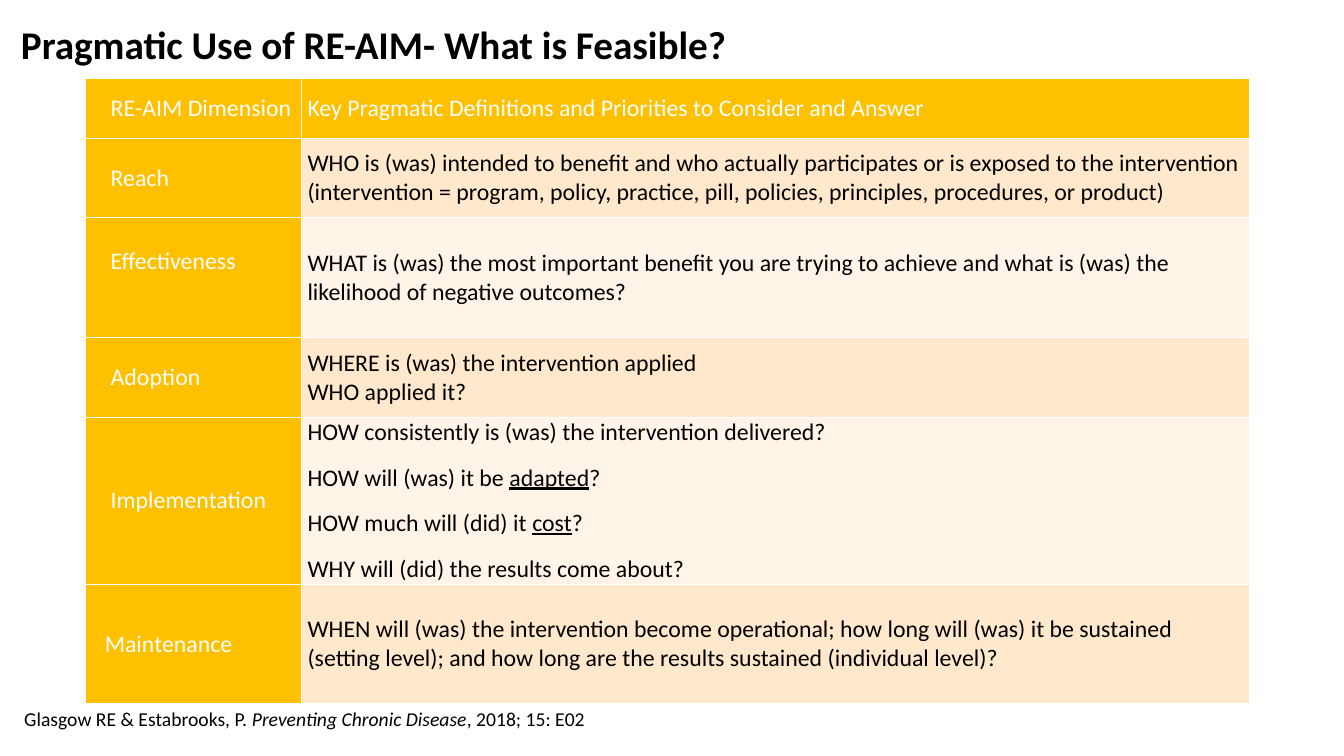
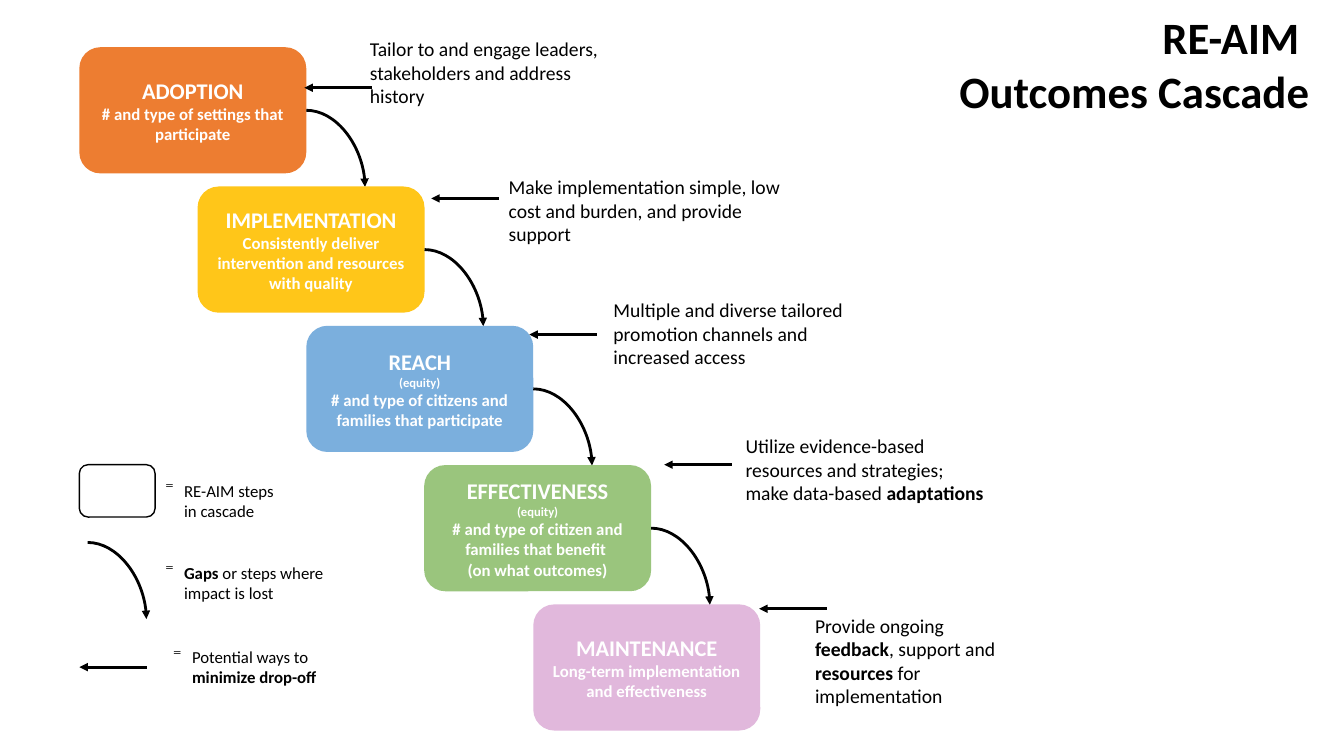
"""Build two slides on RE-AIM: a table of pragmatic questions and an outcomes cascade."""
from dataclasses import dataclass

from lxml.etree import SubElement
from pptx import Presentation
from pptx.dml.color import RGBColor
from pptx.enum.shapes import MSO_CONNECTOR, MSO_SHAPE
from pptx.enum.text import MSO_ANCHOR, PP_ALIGN
from pptx.oxml.ns import qn
from pptx.util import Cm, Pt


@dataclass(frozen=True)
class Theme:
    font: str = "Calibri"
    black: str = "000000"
    white: str = "FFFFFF"
    gold: str = "FFC000"
    bands: tuple = ("FFE8CC", "FFF4E7")
    title: int = 28
    big_title: int = 32
    table: int = 17
    step: int = 16
    body: int = 14
    small: int = 12
    tiny: int = 9


THEME = Theme()

TABLE_TITLE = "Pragmatic Use of RE-AIM- What is Feasible?"
CITATION = "Glasgow RE & Estabrooks, P. *Preventing Chronic Disease*, 2018; 15: E02"
TABLE_LEFT, TABLE_TOP = 2.16, 1.98
COLUMN_WIDTHS = (5.44, 23.88)
TABLE_ROWS = [
    (1.5, "RE-AIM Dimension", ["Key Pragmatic Definitions and Priorities to Consider and Answer"]),
    (2.01, "Reach", [
        "WHO is (was) intended to benefit and who actually participates or is exposed to the "
        "intervention (intervention = program, policy, practice, pill, policies, principles, "
        "procedures, or product)"]),
    (3.02, "Effectiveness", [
        "WHAT is (was) the most important benefit you are trying to achieve and what is (was) "
        "the likelihood of negative outcomes?"]),
    (2.01, "Adoption", ["WHERE is (was) the intervention applied", "WHO applied it?"]),
    (4.01, "Implementation", [
        "HOW consistently is (was) the intervention delivered?",
        "HOW will (was) it be *adapted*?",
        "HOW much will (did) it *cost*?",
        "WHY will (did) the results come about?"]),
    (3.02, "Maintenance", [
        "WHEN will (was) the intervention become operational; how long will (was) it be "
        "sustained (setting level); and how long are the results sustained (individual level)?"]),
]

CASCADE_TITLE = ["RE-AIM ", "Outcomes Cascade"]
STEP_TOP, STEP_PITCH = 1.19, 3.51
STEP_WIDTH, STEP_HEIGHT = 5.72, 3.18
GAP_WIDTH, GAP_HEIGHT = 1.48, 1.93
ARROW_LENGTH = 1.7
STEPS = [
    (2, "ED7D31", 100, ["ADOPTION", "# and type of settings that participate"]),
    (4.98, "FFC000", 90, ["IMPLEMENTATION",
                          "Consistently deliver intervention and resources with quality"]),
    (7.72, "5B9BD5", 80, ["REACH", "(equity)",
                          "# and type of citizens and families that participate"]),
    (10.69, "70AD47", 70, ["EFFECTIVENESS", "(equity)",
                           "# and type of citizen and families that benefit ",
                           "(on what outcomes)"]),
    (13.44, "CD89C5", 60, ["MAINTENANCE", "Long-term implementation and effectiveness"]),
]
REMEDIES = [
    ((7.67, 2.21), (9.07, 0.81, 6.35, 2.06),
     "Tailor to and engage leaders, stakeholders and address history"),
    ((10.87, 5), (12.57, 4.29, 7.42, 2.06),
     "Make implementation simple, low cost and burden, and provide support"),
    ((13.34, 8.43), (15.21, 7.39, 6.99, 2.06),
     "Multiple and diverse tailored promotion channels and increased access"),
    ((16.74, 11.71), (18.54, 10.82, 6.65, 2.06),
     "Utilize evidence-based resources and strategies; make data-based *adaptations*"),
    ((19.13, 15.34), (20.29, 15.34, 5.08, 2.64),
     "Provide ongoing *feedback*, support and *resources* for implementation"),
]
LEGEND_BOX = (2, 11.71, 1.91, 1.32)
LEGEND_GAP = (2.21, 13.67)
LEGEND_ARROW = (2, 16.81)
LEGEND = [
    ((3.91, 11.99, 3.48, 1.27), "RE-AIM steps in cascade"),
    ((3.91, 14.05, 4.6, 1.27), "*Gaps* or steps where impact is lost"),
    ((4.11, 16.18, 4.14, 1.27), "Potential ways to *minimize drop-off*"),
]


def lengths(values):
    return [Cm(value) for value in values]


def write(text_frame, lines, size, colour=THEME.black, bold=False, emphasis="bold",
          align=PP_ALIGN.LEFT, sizes=None):
    """Write one paragraph per line; text between asterisks gets the emphasis."""
    text_frame.word_wrap = True
    for index, line in enumerate(lines):
        paragraph = text_frame.add_paragraph() if index else text_frame.paragraphs[0]
        paragraph.alignment = align
        for position, part in enumerate(line.split("*")):
            if not part:
                continue
            run = paragraph.add_run()
            run.text = part
            run.font.name = THEME.font
            run.font.size = Pt(sizes[index] if sizes else size)
            run.font.color.rgb = RGBColor.from_string(colour)
            run.font.bold = bold
            if position % 2:
                setattr(run.font, emphasis, True)


def add_text(slide, box, lines, size, **style):
    shape = slide.shapes.add_textbox(*lengths(box))
    write(shape.text_frame, lines, size, **style)
    return shape


def add_rounded_box(slide, box, colour, opacity=100):
    shape = slide.shapes.add_shape(MSO_SHAPE.ROUNDED_RECTANGLE, *lengths(box))
    shape.shadow.inherit = False
    shape.fill.solid()
    shape.fill.fore_color.rgb = RGBColor.from_string(colour)
    shape.line.fill.background()
    if opacity < 100:
        colour_element = shape.element.spPr.find(qn("a:solidFill"))[0]
        SubElement(colour_element, qn("a:alpha"), val=str(opacity * 1000))
    return shape


def add_arrow(slide, start, end, kind=MSO_CONNECTOR.STRAIGHT):
    connector = slide.shapes.add_connector(kind, *lengths(start + end))
    connector.line.color.rgb = RGBColor.from_string(THEME.black)
    connector.line.width = Pt(2)
    properties = connector.element.spPr
    SubElement(properties.find(qn("a:ln")), qn("a:tailEnd"), type="triangle")
    SubElement(properties, qn("a:effectLst"))
    return connector


def add_gap(slide, left, top):
    connector = add_arrow(slide, (left, top), (left + GAP_WIDTH, top + GAP_HEIGHT),
                          MSO_CONNECTOR.CURVE)
    connector.element.spPr.find(qn("a:prstGeom")).set("prst", "curvedConnector2")


def add_remedy_arrow(slide, tip):
    add_arrow(slide, (tip[0] + ARROW_LENGTH, tip[1]), tip)


def style_cell(cell, colour):
    cell.margin_left = cell.margin_right = Cm(0.15)
    cell.margin_top = cell.margin_bottom = 0
    cell.vertical_anchor = MSO_ANCHOR.MIDDLE
    properties = cell._tc.get_or_add_tcPr()
    for side in ("lnL", "lnR", "lnT", "lnB"):
        border = SubElement(properties, qn(f"a:{side}"), w=str(Pt(1)))
        SubElement(SubElement(border, qn("a:solidFill")), qn("a:srgbClr"), val=THEME.white)
    cell.fill.solid()
    cell.fill.fore_color.rgb = RGBColor.from_string(colour)


def add_dimension_table(slide):
    heights = [row[0] for row in TABLE_ROWS]
    box = (TABLE_LEFT, TABLE_TOP, sum(COLUMN_WIDTHS), sum(heights))
    table = slide.shapes.add_table(len(TABLE_ROWS), len(COLUMN_WIDTHS), *lengths(box)).table
    for column, width in zip(table.columns, COLUMN_WIDTHS):
        column.width = Cm(width)
    for index, (height, dimension, questions) in enumerate(TABLE_ROWS):
        table.rows[index].height = Cm(height)
        name, answer = table.cell(index, 0), table.cell(index, 1)
        style_cell(name, THEME.gold)
        style_cell(answer, THEME.bands[(index - 1) % 2] if index else THEME.gold)
        write(name.text_frame, [dimension], THEME.table, THEME.white)
        write(answer.text_frame, questions, THEME.table,
              THEME.black if index else THEME.white, emphasis="underline")
        label = name.text_frame.paragraphs[0]
        indent = 0.33 if dimension == "Maintenance" else 0.48
        label._p.get_or_add_pPr().set("marL", str(Cm(indent)))
        if dimension == "Effectiveness":
            name.vertical_anchor = MSO_ANCHOR.TOP
            label.line_spacing = 2.0
        if dimension == "Implementation":
            for paragraph in answer.text_frame.paragraphs:
                paragraph.space_after = Pt(12)


def build_table_slide(slide):
    add_dimension_table(slide)
    title = add_text(slide, (0.28, 0.08, 24.13, 2.21), [TABLE_TITLE], THEME.title, bold=True)
    title.text_frame.vertical_anchor = MSO_ANCHOR.MIDDLE
    title.text_frame.paragraphs[0].line_spacing = 0.9
    add_text(slide, (0.36, 17.7, 18.8, 0.86), [CITATION], THEME.body, emphasis="italic")


def add_steps(slide):
    for index, (left, colour, opacity, lines) in enumerate(STEPS):
        top = STEP_TOP + index * STEP_PITCH
        step = add_rounded_box(slide, (left, top, STEP_WIDTH, STEP_HEIGHT), colour, opacity)
        step.text_frame.vertical_anchor = MSO_ANCHOR.MIDDLE
        sizes = [THEME.step] + [THEME.tiny if line == "(equity)" else THEME.small
                                for line in lines[1:]]
        write(step.text_frame, lines, THEME.small, THEME.white, bold=True,
              align=PP_ALIGN.CENTER, sizes=sizes)
        if index < len(STEPS) - 1:
            add_gap(slide, left + STEP_WIDTH, top + STEP_HEIGHT / 2)


def add_legend(slide):
    sample = add_rounded_box(slide, LEGEND_BOX, THEME.white)
    sample.line.color.rgb = RGBColor.from_string(THEME.black)
    sample.line.width = Pt(1)
    add_gap(slide, *LEGEND_GAP)
    add_remedy_arrow(slide, LEGEND_ARROW)
    for box, text in LEGEND:
        label = add_text(slide, box, [text], THEME.small)
        properties = label.text_frame.paragraphs[0]._p.get_or_add_pPr()
        properties.set("marL", str(Cm(0.48)))
        properties.set("indent", str(-Cm(0.48)))
        SubElement(properties, qn("a:buChar"), char="⁼")


def build_cascade_slide(slide):
    add_steps(slide)
    add_text(slide, (15.57, 0.13, 17.68, 3), CASCADE_TITLE, THEME.big_title,
             bold=True, align=PP_ALIGN.RIGHT)
    add_legend(slide)
    for tip, box, text in REMEDIES:
        add_remedy_arrow(slide, tip)
        add_text(slide, box, [text], THEME.body)


def main():
    presentation = Presentation()
    presentation.slide_width, presentation.slide_height = Cm(33.87), Cm(19.05)
    for build in (build_table_slide, build_cascade_slide):
        build(presentation.slides.add_slide(presentation.slide_layouts[6]))
    presentation.save("out.pptx")


if __name__ == "__main__":
    main()
